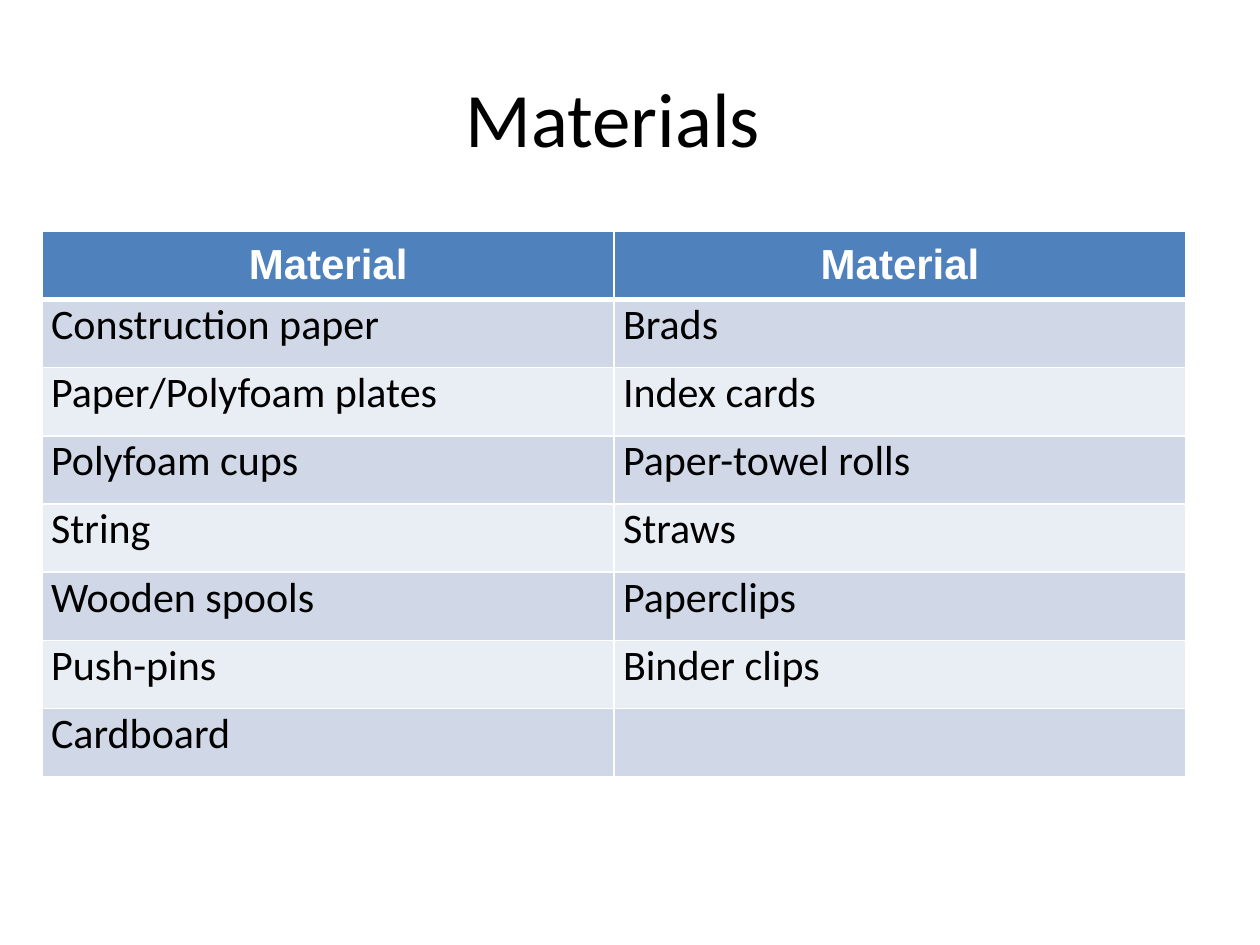
from itertools import zip_longest

from lxml.etree import SubElement
from pptx import Presentation
from pptx.dml.color import RGBColor
from pptx.enum.text import MSO_ANCHOR as Anchor, PP_ALIGN as Align
from pptx.oxml.ns import qn
from pptx.util import Cm, Pt

BLACK = RGBColor(0x00, 0x00, 0x00)
WHITE = RGBColor(0xFF, 0xFF, 0xFF)
BLUE = RGBColor(0x4F, 0x81, 0xBD)
BAND_DARK = RGBColor(0xD0, 0xD8, 0xE8)
BAND_LIGHT = RGBColor(0xE9, 0xED, 0xF4)

HEADER = "Material"
LEFT = ["Construction paper", "Paper/Polyfoam plates", "Polyfoam cups",
        "String", "Wooden spools", "Push-pins", "Cardboard"]
RIGHT = ["Brads", "Index cards", "Paper-towel rolls", "Straws",
         "Paperclips", "Binder clips"]


class Deck:
    """Holds the style and the current slide."""

    body_font = "Calibri"
    header_font = "Arial"
    title_size = 44
    table_size = 24

    def __init__(self):
        self.prs = Presentation()
        self.prs.slide_width, self.prs.slide_height = Cm(25.4), Cm(19.05)
        self.s = self.prs.slides.add_slide(self.prs.slide_layouts[6])

    def run(self, p, text, size, font, color, bold=False):
        r = p.add_run()
        r.text = text
        r.font.size, r.font.name, r.font.bold = Pt(size), font, bold
        r.font.color.rgb = color

    def title(self, text, x, y, w, h):
        tf = self.s.shapes.add_textbox(Cm(x), Cm(y), Cm(w), Cm(h)).text_frame
        tf.word_wrap = True
        tf.vertical_anchor = Anchor.MIDDLE
        tf.margin_right = Cm(0.94)  # sets the title slightly left of centre
        p = tf.paragraphs[0]
        p.alignment = Align.CENTER
        self.run(p, text, self.title_size, self.body_font, BLACK)

    def borders(self, cell, bottom):
        tc_pr = cell._tc.get_or_add_tcPr()
        for side, width in zip("LRTB", (1, 1, 1, bottom)):
            ln = SubElement(tc_pr, qn(f"a:ln{side}"), w=str(Pt(width)))
            fill = SubElement(ln, qn("a:solidFill"))
            SubElement(fill, qn("a:srgbClr"), val=str(WHITE))

    def header_cell(self, cell, text):
        self.borders(cell, bottom=3)
        cell.fill.solid()
        cell.fill.fore_color.rgb = BLUE
        cell.vertical_anchor = Anchor.MIDDLE
        p = cell.text_frame.paragraphs[0]
        p.alignment = Align.CENTER
        self.run(p, text, self.table_size, self.header_font, WHITE, bold=True)

    def body_cell(self, cell, text, color):
        self.borders(cell, bottom=1)
        cell.fill.solid()
        cell.fill.fore_color.rgb = color
        cell.margin_left = cell.margin_right = Cm(0.18)
        cell.margin_top = cell.margin_bottom = 0
        if text:
            self.run(cell.text_frame.paragraphs[0], text, self.table_size,
                     self.body_font, BLACK)

    def table(self, headers, rows, x, y, w, h):
        table = self.s.shapes.add_table(
            len(rows) + 1, len(headers), Cm(x), Cm(y), Cm(w), Cm(h)).table
        for col, text in enumerate(headers):
            self.header_cell(table.cell(0, col), text)
        for i, row in enumerate(rows, start=1):
            color = BAND_DARK if i % 2 else BAND_LIGHT
            for col, text in enumerate(row):
                self.body_cell(table.cell(i, col), text, color)
        # Top and side borders of the first body row meet the header's thick rule
        for col in range(len(headers)):
            top = table.cell(1, col)._tc.tcPr.find(qn("a:lnT"))
            top.set("w", str(Pt(3)))


def main():
    deck = Deck()
    # Title
    deck.title("Materials", 1.27, 0.76, 22.86, 3.18)
    # Two-column list of materials
    rows = list(zip_longest(LEFT, RIGHT, fillvalue=""))
    deck.table([HEADER, HEADER], rows, 0.85, 4.66, 23.06, 11)
    deck.prs.save("out.pptx")


if __name__ == "__main__":
    main()
